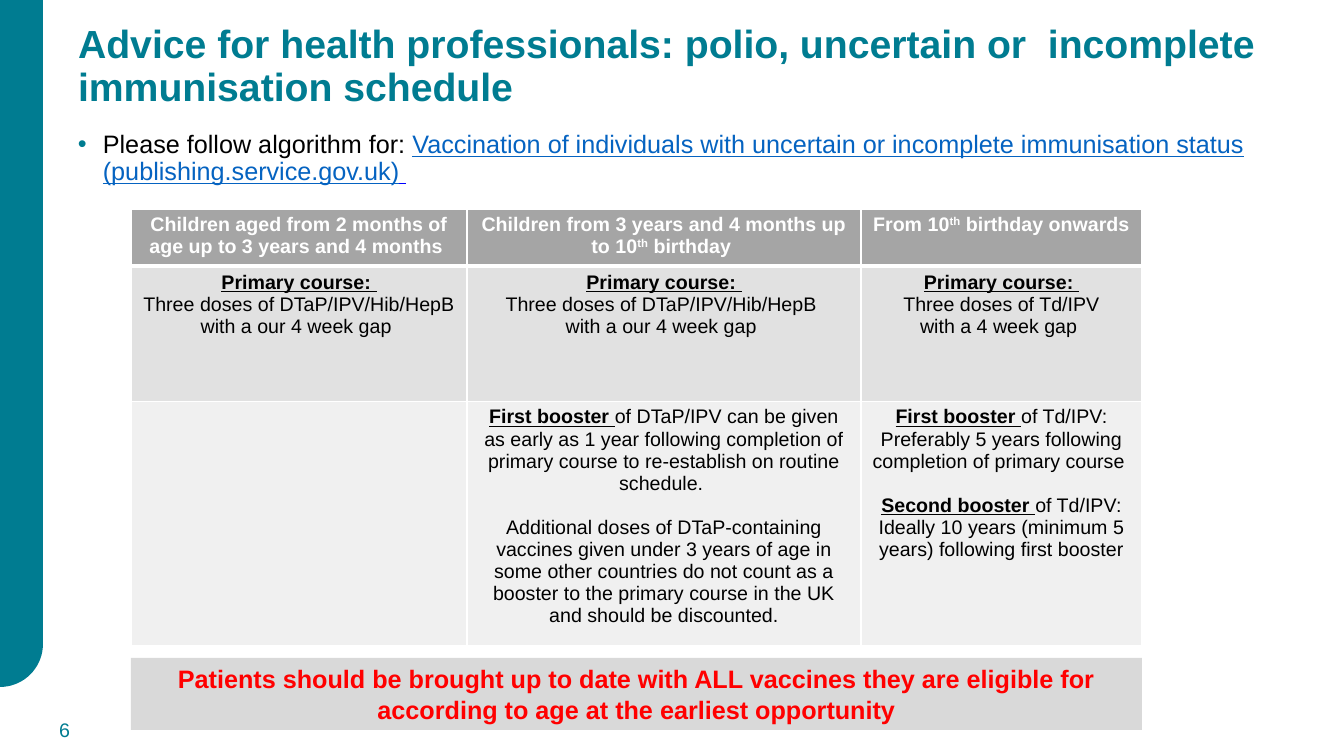
"""Build the polio immunisation schedule slide."""
import math
from dataclasses import dataclass

from lxml import etree
from pptx import Presentation
from pptx.dml.color import RGBColor
from pptx.enum.shapes import MSO_SHAPE
from pptx.enum.text import MSO_ANCHOR, PP_ALIGN
from pptx.oxml.ns import qn
from pptx.util import Pt

CENTER, RIGHT = PP_ALIGN.CENTER, PP_ALIGN.RIGHT
TOP, MIDDLE = MSO_ANCHOR.TOP, MSO_ANCHOR.MIDDLE
RECTANGLE = MSO_SHAPE.RECTANGLE
SCALE = 914400 / 100.8


@dataclass(frozen=True)
class Theme:
    """Colours, typeface and type sizes."""
    teal: str = "007C91"
    black: str = "000000"
    white: str = "FFFFFF"
    link: str = "0563C1"
    link_end: str = "0000FF"
    alert: str = "FF0000"
    panel: str = "D9D9D9"
    rows: tuple = ("A5A5A5", "E1E1E1", "F0F0F0")
    face: str = "Arial"
    title: int = 28
    body: int = 18
    small: int = 14


THEME = Theme()


def px(*lengths):
    """Turn pixel lengths into EMU."""
    return [round(length * SCALE) for length in lengths]


def style(font, size, color, bold=False):
    """Set typeface, size, colour and weight."""
    font.name, font.size, font.bold = THEME.face, Pt(size), bold
    font.color.rgb = RGBColor.from_string(color)


deck = Presentation()
deck.slide_width, deck.slide_height = px(1344, 756)
page = deck.slides.add_slide(deck.slide_layouts[5])

BAND_WIDTH, BAND_HEIGHT = 43, 687
corner = [
    (BAND_WIDTH * math.cos(math.radians(angle)),
     BAND_HEIGHT - BAND_WIDTH + BAND_WIDTH * math.sin(math.radians(angle)))
    for angle in range(0, 91, 5)
]
outline = page.shapes.build_freeform(0, 0, scale=1.0)
outline.add_line_segments([px(x, y) for x, y in [(BAND_WIDTH, 0), *corner]], close=True)
band = outline.convert_to_shape()
band.shadow.inherit = False
band.fill.solid()
band.fill.fore_color.rgb = RGBColor.from_string(THEME.teal)
band.line.fill.background()

title = page.shapes.title
title.left, title.top, title.width, title.height = px(68, 20, 1227, 107)
title.text_frame.word_wrap = True
title.text_frame.vertical_anchor = TOP
para = title.text_frame.paragraphs[0]
para.text = "Advice for health professionals: polio, uncertain or  incomplete immunisation schedule"
para.alignment = PP_ALIGN.LEFT
para.line_spacing = 0.9
style(para.font, THEME.title, THEME.teal, True)

advice = page.shapes.add_textbox(*px(68, 127, 1227, 70))
advice.text_frame.word_wrap = True
para = advice.text_frame.paragraphs[0]
para.line_spacing = 0.9
properties = para._p.get_or_add_pPr()
indent = px(25)[0]
properties.set("marL", str(indent))
properties.set("indent", str(-indent))
bullet_color = etree.SubElement(properties, qn("a:buClr"))
etree.SubElement(bullet_color, qn("a:srgbClr"), val=THEME.teal)
etree.SubElement(properties, qn("a:buFont"), typeface=THEME.face)
etree.SubElement(properties, qn("a:buChar"), char="•")
for text, color in [
    ("Please follow algorithm for: ", THEME.black),
    ("Vaccination of individuals with uncertain or incomplete immunisation status "
     "(publishing.service.gov.uk)", THEME.link),
    (" ", THEME.link_end),
]:
    span = para.add_run()
    span.text = text
    style(span.font, THEME.body, color)
    span.font.underline = color != THEME.black

number = page.shapes.add_textbox(*px(14, 710, 66, 40))
number.text_frame.word_wrap = True
number.text_frame.vertical_anchor = MIDDLE
para = number.text_frame.paragraphs[0]
para.text = "6"
para.alignment = RIGHT
style(para.font, THEME.small, THEME.teal)

PRIMARY = [("Primary course: ", "lead")]
INFANT_COURSE = [
    PRIMARY,
    [("Three doses of DTaP/IPV/Hib/HepB ", "")],
    [("with a our 4 week gap ", "")],
]
SCHEDULE = [
    [
        [[("Children aged from 2 months of age up to 3 years and 4 months ", "")]],
        [[("Children from 3 years and 4 months up to 10", ""), ("th", "super"),
          (" birthday ", "")]],
        [[("From 10", ""), ("th", "super"), (" birthday onwards", "")]],
    ],
    [
        INFANT_COURSE,
        INFANT_COURSE,
        [PRIMARY, [("Three doses of Td/IPV", "")], [("with a 4 week gap ", "")]],
    ],
    [
        [],
        [
            [("First booster ", "lead"),
             ("of DTaP/IPV can be given as early as 1 year following completion of "
              "primary course to re-establish on routine schedule. ", "")],
            [("Additional doses of DTaP-containing vaccines given under 3 years of age in "
              "some other countries do not count as a booster to the primary course in "
              "the UK and should be discounted.", "")],
        ],
        [
            [("First booster ", "lead"),
             ("of Td/IPV: Preferably 5 years following completion of primary course ", "")],
            [("Second booster ", "lead"),
             ("of Td/IPV: Ideally 10 years (minimum 5 years) following first booster", "")],
        ],
    ],
]
COLUMN_WIDTHS = (336, 394, 281)
ROW_HEIGHTS = (54, 135, 230)
table = page.shapes.add_table(
    3, 3, *px(131, 209, sum(COLUMN_WIDTHS), sum(ROW_HEIGHTS))).table
table.horz_banding = False
for column, width in zip(table.columns, px(*COLUMN_WIDTHS)):
    column.width = width
for row, height in zip(table.rows, px(*ROW_HEIGHTS)):
    row.height = height

for row_index, row_content in enumerate(SCHEDULE):
    header = row_index == 0
    for column_index, cell_content in enumerate(row_content):
        cell = table.cell(row_index, column_index)
        borders = cell._tc.get_or_add_tcPr()
        for side in ("lnL", "lnR", "lnT", "lnB"):
            thick = (row_index, side) in [(0, "lnB"), (1, "lnT")]
            border = etree.SubElement(borders, qn(f"a:{side}"), w=str(Pt(3 if thick else 1)))
            paint = etree.SubElement(border, qn("a:solidFill"))
            etree.SubElement(paint, qn("a:srgbClr"), val=THEME.white)
        cell.fill.solid()
        cell.fill.fore_color.rgb = RGBColor.from_string(THEME.rows[row_index])
        for para_index, spans in enumerate(cell_content):
            frame = cell.text_frame
            para = frame.add_paragraph() if para_index else frame.paragraphs[0]
            para.alignment = CENTER
            if row_index == 2 and para_index:
                para.space_before = Pt(16)
            for text, role in spans:
                span = para.add_run()
                span.text = text
                style(span.font, THEME.small, THEME.white if header else THEME.black,
                      header or role == "lead")
                span.font.underline = role == "lead"
                if role == "super":
                    span._r.get_or_add_rPr().set("baseline", "30000")

reminder = page.shapes.add_shape(RECTANGLE, *px(131, 658, 1011, 72))
reminder.shadow.inherit = False
reminder.fill.solid()
reminder.fill.fore_color.rgb = RGBColor.from_string(THEME.panel)
reminder.line.fill.background()
reminder.text_frame.word_wrap = True
reminder.text_frame.vertical_anchor = MIDDLE
para = reminder.text_frame.paragraphs[0]
para.text = ("Patients should be brought up to date with ALL vaccines they are eligible for "
             "according to age at the earliest opportunity")
para.alignment = CENTER
style(para.font, THEME.body, THEME.alert, True)

deck.save("out.pptx")
